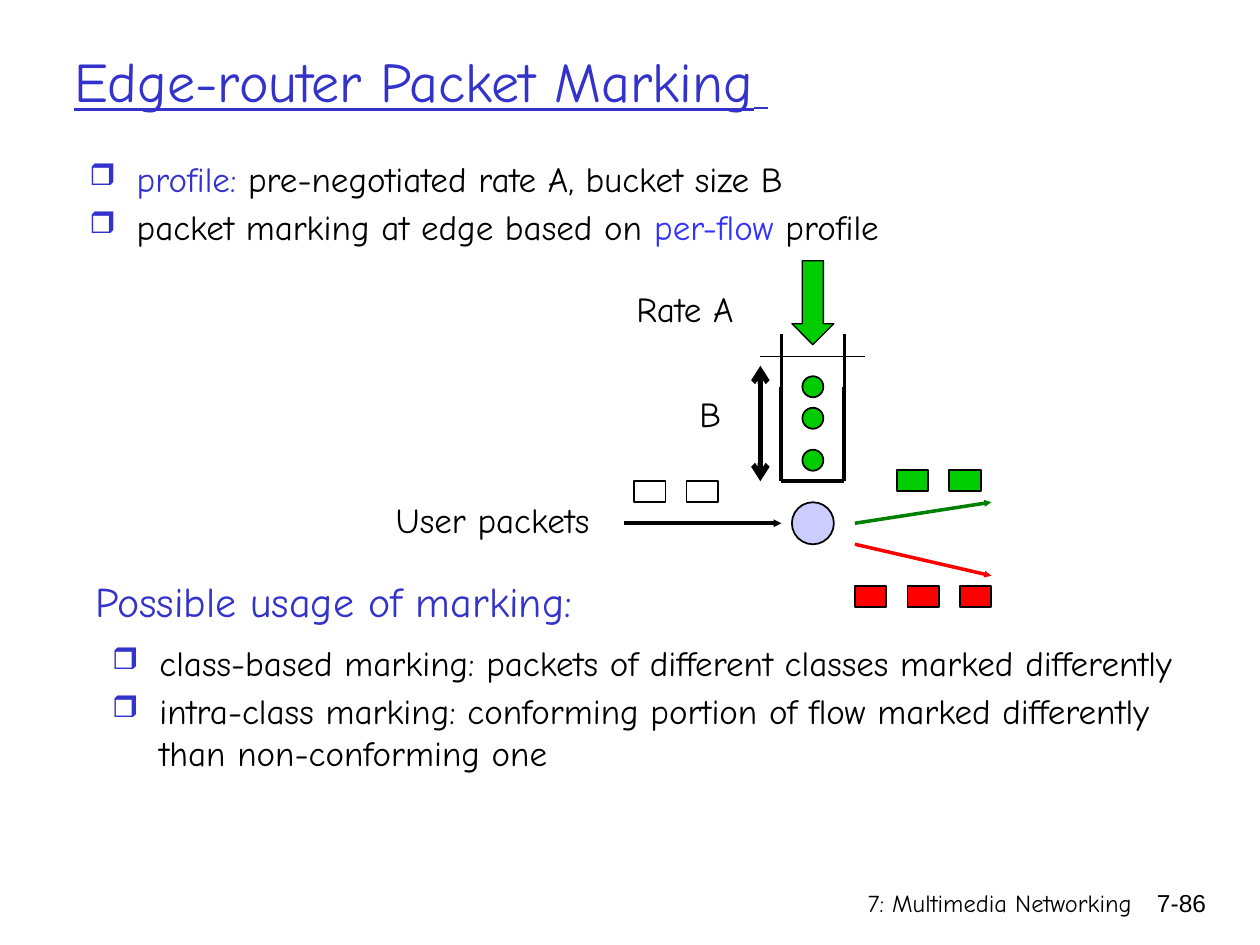
from lxml.etree import SubElement
from pptx import Presentation
from pptx.dml.color import RGBColor
from pptx.enum.shapes import MSO_CONNECTOR as Connector, MSO_SHAPE as Shape
from pptx.enum.text import MSO_ANCHOR as Anchor, PP_ALIGN as Align
from pptx.oxml.ns import qn
from pptx.util import Pt

BLACK = RGBColor(0x00, 0x00, 0x00)
WHITE = RGBColor(0xFF, 0xFF, 0xFF)
INDIGO = RGBColor(0x33, 0x33, 0xCC)
BLUE = RGBColor(0x33, 0x33, 0xFF)
LILAC = RGBColor(0xCC, 0xCC, 0xFF)
GREEN = RGBColor(0x00, 0xCC, 0x00)
DARK_GREEN = RGBColor(0x00, 0x80, 0x00)
RED = RGBColor(0xFF, 0x00, 0x00)
BODY_FONT = "Comic Neue"


def points(*values):
    return [Pt(value) for value in values]


def add_bullet(paragraph):
    properties = paragraph._p.get_or_add_pPr()
    properties.set("marL", str(Pt(27)))
    properties.set("indent", str(-Pt(27)))
    color = SubElement(properties, qn("a:buClr"))
    SubElement(color, qn("a:srgbClr"), val=str(INDIGO))
    SubElement(properties, qn("a:buSzPct"), val="85000")
    SubElement(properties, qn("a:buChar"), char="❒")


def add_text(slide, box, paragraphs, size=20, color=BLACK, font=BODY_FONT,
             align=Align.LEFT, bullets=False):
    frame = slide.shapes.add_textbox(*points(*box)).text_frame
    frame.word_wrap = True
    for index, runs in enumerate(paragraphs):
        paragraph = frame.add_paragraph() if index else frame.paragraphs[0]
        paragraph.alignment = align
        if bullets:
            paragraph.space_after = Pt(3.5)
            add_bullet(paragraph)
        paragraph.font.name = font
        paragraph.font.size = Pt(size)
        paragraph.font.color.rgb = color
        for text, run_color in runs:
            run = paragraph.add_run()
            run.text = text
            if run_color is not None:
                run.font.color.rgb = run_color
    return frame


def add_label(slide, box, text, **style):
    return add_text(slide, box, [[(text, None)]], **style)


def add_title(slide):
    frame = add_label(slide, (35.3, 18.7, 612, 54), "Edge-router Packet Marking",
                      size=32, color=INDIGO)
    frame.vertical_anchor = Anchor.MIDDLE
    paragraph = frame.paragraphs[0]
    paragraph.font.underline = True
    space = paragraph.add_run()
    space.text = " "
    space.font.size = Pt(24)


def add_figure(slide, kind, box, fill, line_width=1):
    shape = slide.shapes.add_shape(kind, *points(*box))
    shape.shadow.inherit = False
    shape.fill.solid()
    shape.fill.fore_color.rgb = fill
    shape.line.color.rgb = BLACK
    shape.line.width = Pt(line_width)


def add_packets(slide, left, top, count, fill):
    for index in range(count):
        add_figure(slide, Shape.RECTANGLE, (left + 30 * index, top, 18, 12), fill)


def add_line(slide, start, end, width, color=BLACK, head=None, tail=None, tip="sm"):
    line = slide.shapes.add_connector(Connector.STRAIGHT, *points(*start, *end))
    line.line.color.rgb = color
    line.line.width = Pt(width)
    outline = line.line._get_or_add_ln()
    for tag, kind in (("a:headEnd", head), ("a:tailEnd", tail)):
        if kind:
            SubElement(outline, qn(tag), type=kind, w=tip, len=tip)
    SubElement(line._element.spPr, qn("a:effectLst"))


def add_bucket(slide):
    left, right, rim, joint, bottom = 446.5, 482.5, 191, 221, 275
    for side in (left, right):
        add_line(slide, (side, joint), (side, bottom), 2.25)
        add_line(slide, (side, joint), (side, rim), 2)
    add_line(slide, (left, bottom), (right, bottom), 2.25)
    add_line(slide, (434.5, 203.75), (494.5, 203.75), 0.75)
    for top in (215, 233, 257):
        add_figure(slide, Shape.OVAL, (458.5, top, 12, 12), GREEN)
    add_figure(slide, Shape.DOWN_ARROW, (452.5, 149, 24, 48), GREEN, 0.75)
    add_line(slide, (434.5, 209), (434.5, bottom), 3, head="arrow", tail="arrow", tip="med")
    add_label(slide, (356.5, 160.5, 90, 31), "Rate A")
    add_label(slide, (392.5, 221, 27, 31), "B")


def add_packet_flow(slide):
    add_packets(slide, 362.25, 275, 2, WHITE)
    add_packets(slide, 512.5, 268.75, 2, GREEN)
    add_packets(slide, 488.5, 335, 3, RED)
    add_figure(slide, Shape.OVAL, (452.5, 287, 24, 24), LILAC)
    add_line(slide, (356.5, 299), (446.5, 299), 2.25, tail="triangle")
    add_line(slide, (488.5, 299), (566.5, 287), 2, DARK_GREEN, tail="triangle")
    add_line(slide, (488.5, 311), (566.5, 329), 2, RED, tail="triangle")
    add_label(slide, (219, 281.5, 168, 31), "User packets")


def main():
    presentation = Presentation()
    presentation.slide_width, presentation.slide_height = points(720, 540)
    slide = presentation.slides.add_slide(presentation.slide_layouts[6])
    add_title(slide)
    add_text(slide, (44, 86.5, 630, 72), [
        [("profile: ", INDIGO), ("pre-negotiated rate A, bucket size B", None)],
        [("packet marking at edge based on ", None), ("per-flow", BLUE), (" profile", None)],
    ], bullets=True)
    add_bucket(slide)
    add_packet_flow(slide)
    add_label(slide, (47.5, 325.5, 354, 36), "Possible usage of marking:", size=24, color=INDIGO)
    add_text(slide, (57, 363, 648, 144), [
        [("class-based marking: packets of different classes marked differently", None)],
        [("intra-class marking: conforming portion of flow marked differently "
          "than non-conforming one", None)],
    ], bullets=True)
    add_label(slide, (350, 504, 304, 36), "7: Multimedia Networking", size=14, align=Align.RIGHT)
    add_label(slide, (643, 504, 53.3, 36), "7-86", size=14, font="Arial", align=Align.RIGHT)
    presentation.save("out.pptx")


if __name__ == "__main__":
    main()
